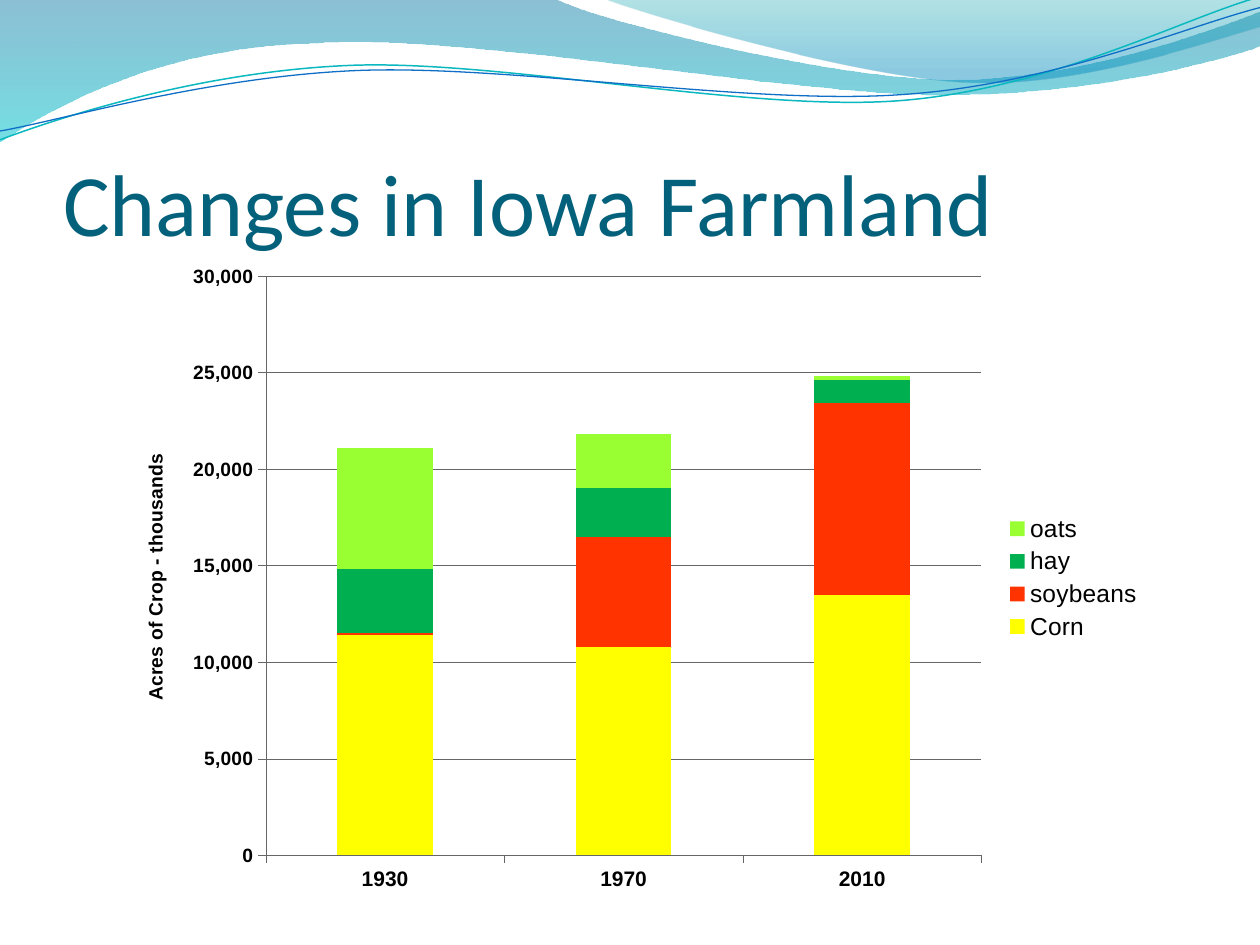
import math

from lxml import etree
from pptx import Presentation
from pptx.chart.data import CategoryChartData
from pptx.dml.color import RGBColor
from pptx.enum.chart import XL_CHART_TYPE, XL_LEGEND_POSITION, XL_TICK_MARK
from pptx.enum.text import MSO_ANCHOR, MSO_AUTO_SIZE, PP_ALIGN
from pptx.oxml.ns import qn
from pptx.util import Inches, Pt

STACKED = XL_CHART_TYPE.COLUMN_STACKED
LEGEND_RIGHT = XL_LEGEND_POSITION.RIGHT
OUTSIDE = XL_TICK_MARK.OUTSIDE
LEFT, BOTTOM = PP_ALIGN.LEFT, MSO_ANCHOR.BOTTOM
NO_FIT = MSO_AUTO_SIZE.NONE

CELL = Inches(1)
COLUMNS, ROWS = 10, 7.5
SIDES = ("left", "top", "width", "height")

THEME = {
    "title": {"name": "Calibri", "size": Pt(50), "bold": False, "color": "04617B"},
    "chart": {"name": "Vollkorn", "size": Pt(10), "color": "000000"},
    "category": {"name": "Arial", "size": Pt(12), "bold": True, "color": "000000"},
    "value": {"name": "Arial", "size": Pt(11), "bold": True, "color": "000000"},
    "legend": {"name": "Arial", "size": Pt(14), "bold": False, "color": "000000"},
    "axis_line": "666666",
    "crops": {"Corn": "FFFF00", "soybeans": "FF3300", "hay": "00B050", "oats": "99FF33"},
}


def style_font(font, style):
    for key, value in style.items():
        if key == "color":
            font.color.rgb = RGBColor.from_string(value)
        else:
            setattr(font, key, value)


def draw_wave(page, box, start, segments, closed, tilt=0):
    left, top, width, height = box
    middle_x, middle_y = left + width / 2, top + height / 2
    cosine, sine = math.cos(math.radians(tilt)), math.sin(math.radians(tilt))

    builder = page.shapes.build_freeform(0, 0)
    builder.add_line_segments([(CELL, CELL)], close=False)
    wave = builder.convert_to_shape()
    for side, cells in zip(SIDES, box):
        setattr(wave, side, round(cells * CELL))
    wave.rotation = -tilt
    wave.shadow.inherit = False

    outline = next(wave._element.iter(qn("a:path")))
    for node in list(outline):
        outline.remove(node)
    outline.set("w", str(wave.width))
    outline.set("h", str(wave.height))
    for index, segment in enumerate([start] + segments):
        tag = "a:moveTo" if index == 0 else "a:lnTo" if len(segment) == 2 else "a:cubicBezTo"
        step = etree.SubElement(outline, qn(tag))
        for x, y in zip(segment[::2], segment[1::2]):
            across, down = x - middle_x, y - middle_y
            local_x = cosine * across - sine * down + width / 2
            local_y = sine * across + cosine * down + height / 2
            etree.SubElement(step, qn("a:pt"),
                             x=str(round(local_x * CELL)), y=str(round(local_y * CELL)))
    if closed:
        etree.SubElement(outline, qn("a:close"))
    return wave


deck = Presentation()
deck.slide_width, deck.slide_height = int(COLUMNS * CELL), int(ROWS * CELL)
page = deck.slides.add_slide(deck.slide_layouts[5])

bands = [
    ((-0.01, -0.01, 10.02, 1.14), (0, 0),
     [(4.4, -0.01), (4.76, 0.17, 6.64, 0.63, 7.58, 0.63),
      (8.53, 0.63, 9.58, 0.26, 10, 0.09), (10.01, 0.36),
      (9.83, 0.44, 8.7, 0.76, 7.46, 0.75), (6.22, 0.75, 3.82, 0.28, 2.57, 0.34),
      (1.29, 0.36, 0.46, 0.83, -0.01, 1.13), (0, 0)],
     [(0, "0074A1", 45), (1, "00C6CF", 55)]),
    ((4.79, -0.01, 5.21, 0.7), (4.79, -0.01),
     [(5.09, 0.11, 6.82, 0.62, 7.69, 0.65), (8.56, 0.69, 9.61, 0.32, 10, 0.21),
      (10, 0), (4.79, -0.01)],
     [(0, "00A1A9", 30), (0.8, "008BBF", 45)]),
]
for box, start, segments, stops in bands:
    band = draw_wave(page, box, start, segments, True)
    band.line.fill.background()
    band.fill.gradient()
    band.fill.gradient_angle = 270
    for stop, (position, color, _) in zip(band.fill.gradient_stops, stops):
        stop.position = position
        stop.color.rgb = RGBColor.from_string(color)
    for node, (_, _, opacity) in zip(band._element.iter(qn("a:srgbClr")), stops):
        etree.SubElement(node, qn("a:alpha"), val=str(opacity * 1000))

strands = [
    ((-0.02, 0.22, 10.02, 0.71), (0, 1.11),
     [(0.48, 0.93, 1.58, 0.57, 2.77, 0.52), (3.95, 0.47, 5.93, 0.89, 7.13, 0.8),
      (8.33, 0.71, 9.38, 0.15, 9.98, -0.02)], "0AB8BF", 0.85),
    ((-0.02, 0.3, 10.03, 0.58), (0, 1.04),
     [(0.47, 0.96, 1.64, 0.61, 2.83, 0.56), (4.03, 0.51, 5.97, 0.84, 7.17, 0.75),
      (8.36, 0.67, 9.41, 0.21, 10, 0.06)], "0F6FC6", 0.75),
]
for box, start, segments, color, width in strands:
    strand = draw_wave(page, box, start, segments, False, tilt=2.7)
    strand.fill.background()
    strand.line.color.rgb = RGBColor.from_string(color)
    strand.line.width = Pt(width)

title = page.shapes.title
title._element.getparent().append(title._element)
for side, cells in zip(SIDES, (0.5, 0.77, 9.08, 1.25)):
    setattr(title, side, round(cells * CELL))
frame_format = {
    "margin_left": 0, "margin_top": Inches(0.05), "margin_right": 0, "margin_bottom": 0,
    "vertical_anchor": BOTTOM, "word_wrap": True, "auto_size": NO_FIT,
}
for key, value in frame_format.items():
    setattr(title.text_frame, key, value)
title.text_frame.text = "Changes in Iowa Farmland"
para = title.text_frame.paragraphs[0]
para.alignment = LEFT
style_font(para.runs[0].font, THEME["title"])

acres = {
    "Corn": (11400, 10800, 13500),
    "soybeans": (100, 5700, 9900),
    "hay": (3300, 2500, 1200),
    "oats": (6300, 2800, 200),
}
data = CategoryChartData(number_format="#,##0")
data.categories = ["1930", "1970", "2010"]
for crop, values in acres.items():
    data.add_series(crop, values)
chart_left, chart_top, chart_width, chart_height = 0.92, 2, 8.25, 5.17
chart_box = [round(cells * CELL)
             for cells in (chart_left, chart_top, chart_width, chart_height)]
chart = page.shapes.add_chart(STACKED, *chart_box, data).chart
style_font(chart.font, THEME["chart"])
chart.has_title = False
chart.has_legend = True
chart.legend.position = LEGEND_RIGHT
chart.legend.include_in_layout = False
style_font(chart.legend.font, THEME["legend"])

plot = chart.plots[0]
plot.gap_width, plot.overlap, plot.vary_by_categories = 150, 100, False
for series in plot.series:
    series.format.fill.solid()
    series.format.fill.fore_color.rgb = RGBColor.from_string(THEME["crops"][series.name])
    series.format.line.fill.background()

category_axis, value_axis = chart.category_axis, chart.value_axis
value_format = {"minimum_scale": 0, "maximum_scale": 30000, "major_unit": 5000,
                "has_major_gridlines": True, "has_title": True}
for key, value in value_format.items():
    setattr(value_axis, key, value)
value_axis.tick_labels.number_format = "#,##0"
value_axis.tick_labels.number_format_is_linked = False
for axis, style in ((category_axis, "category"), (value_axis, "value")):
    axis.major_tick_mark = OUTSIDE
    style_font(axis.tick_labels.font, THEME[style])
for lined in (category_axis, value_axis, value_axis.major_gridlines):
    lined.format.line.color.rgb = RGBColor.from_string(THEME["axis_line"])
    lined.format.line.width = Pt(0.25)
heading = value_axis.axis_title.text_frame
heading.text = "Acres of Crop - thousands"
style_font(heading.paragraphs[0].runs[0].font, THEME["value"])

plot_area = chart._chartSpace.find(".//" + qn("c:plotArea"))
layout = plot_area.find(qn("c:layout"))
if layout is None:
    layout = etree.Element(qn("c:layout"))
    plot_area.insert(0, layout)
manual = etree.SubElement(layout, qn("c:manualLayout"))
inner_plot = {"layoutTarget": "inner", "xMode": "edge", "yMode": "edge",
              "x": 1.19 / chart_width, "y": 0.19 / chart_height,
              "w": 5.68 / chart_width, "h": 4.6 / chart_height}
for key, value in inner_plot.items():
    etree.SubElement(manual, qn("c:" + key), val=str(value))

deck.save("out.pptx")
